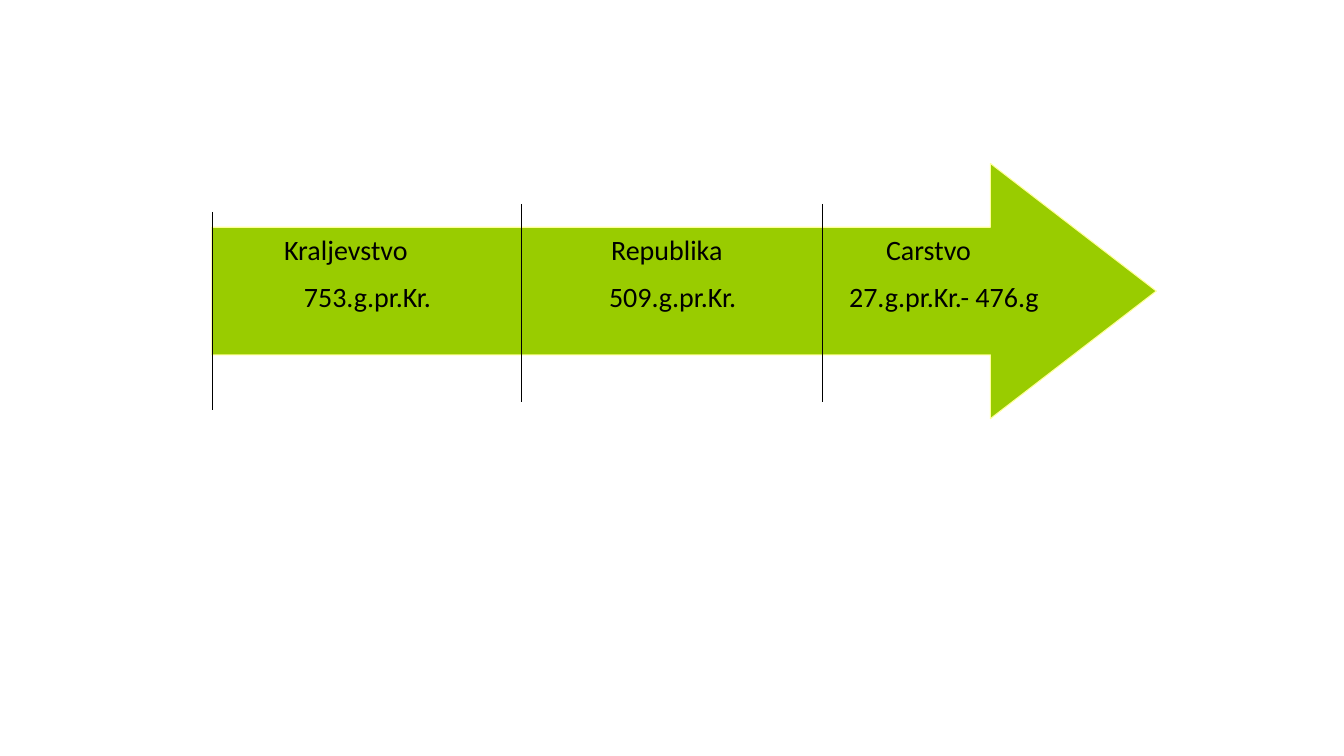
from dataclasses import dataclass

from lxml.etree import SubElement
from pptx import Presentation
from pptx.dml.color import RGBColor
from pptx.enum.shapes import MSO_CONNECTOR, MSO_SHAPE
from pptx.enum.text import MSO_ANCHOR, PP_ALIGN
from pptx.oxml.ns import qn
from pptx.util import Cm, Pt


@dataclass(frozen=True)
class Theme:
    font: str = "Calibri"
    text_size: Pt = Pt(20)
    text: RGBColor = RGBColor(0x00, 0x00, 0x00)
    band: RGBColor = RGBColor(0x99, 0xCC, 0x00)
    band_edge: RGBColor = RGBColor(0xFF, 0xFF, 0x99)
    divider: RGBColor = RGBColor(0x00, 0x00, 0x00)


theme = Theme()

presentation = Presentation()
presentation.slide_width = Cm(33.87)
presentation.slide_height = Cm(19.05)
slide = presentation.slides.add_slide(presentation.slide_layouts[6])

timeline = slide.shapes.add_shape(
    MSO_SHAPE.RIGHT_ARROW, Cm(5.34), Cm(4.12), Cm(23.8), Cm(6.43)
)
timeline.adjustments[0] = 0.5
timeline.adjustments[1] = 0.65
timeline.shadow.inherit = False
timeline.fill.solid()
timeline.fill.fore_color.rgb = theme.band
timeline.line.color.rgb = theme.band_edge
timeline.line.width = Pt(0.75)

periods = timeline.text_frame
periods.word_wrap = True
periods.vertical_anchor = MSO_ANCHOR.TOP

rows = [
    (["Kraljevstvo", "Republika", "Carstvo"], [1.57, 9.81, 16.74]),
    (["753.g.pr.Kr.", "509.g.pr.Kr.", "27.g.pr.Kr.- 476.g"], [2.07, 9.76, 15.81]),
]
for index, (labels, stops) in enumerate(rows):
    row = periods.paragraphs[0] if index == 0 else periods.add_paragraph()
    row.alignment = PP_ALIGN.LEFT
    row.space_after = Pt(10)
    tab_list = SubElement(row._p.get_or_add_pPr(), qn("a:tabLst"))
    for label, stop in zip(labels, stops):
        SubElement(tab_list, qn("a:tab"), pos=str(Cm(stop)), algn="l")
        run = row.add_run()
        run.text = "\t" + label
        run.font.name = theme.font
        run.font.size = theme.text_size
        run.font.color.rgb = theme.text

for left, top in [(5.34, 5.34), (20.73, 5.14), (13.13, 5.14)]:
    divider = slide.shapes.add_connector(
        MSO_CONNECTOR.STRAIGHT, Cm(left), Cm(top), Cm(left), Cm(top + 5)
    )
    divider.line.color.rgb = theme.divider
    divider.line.width = Pt(0.5)
    SubElement(divider._element.spPr, qn("a:effectLst"))

presentation.save("out.pptx")
